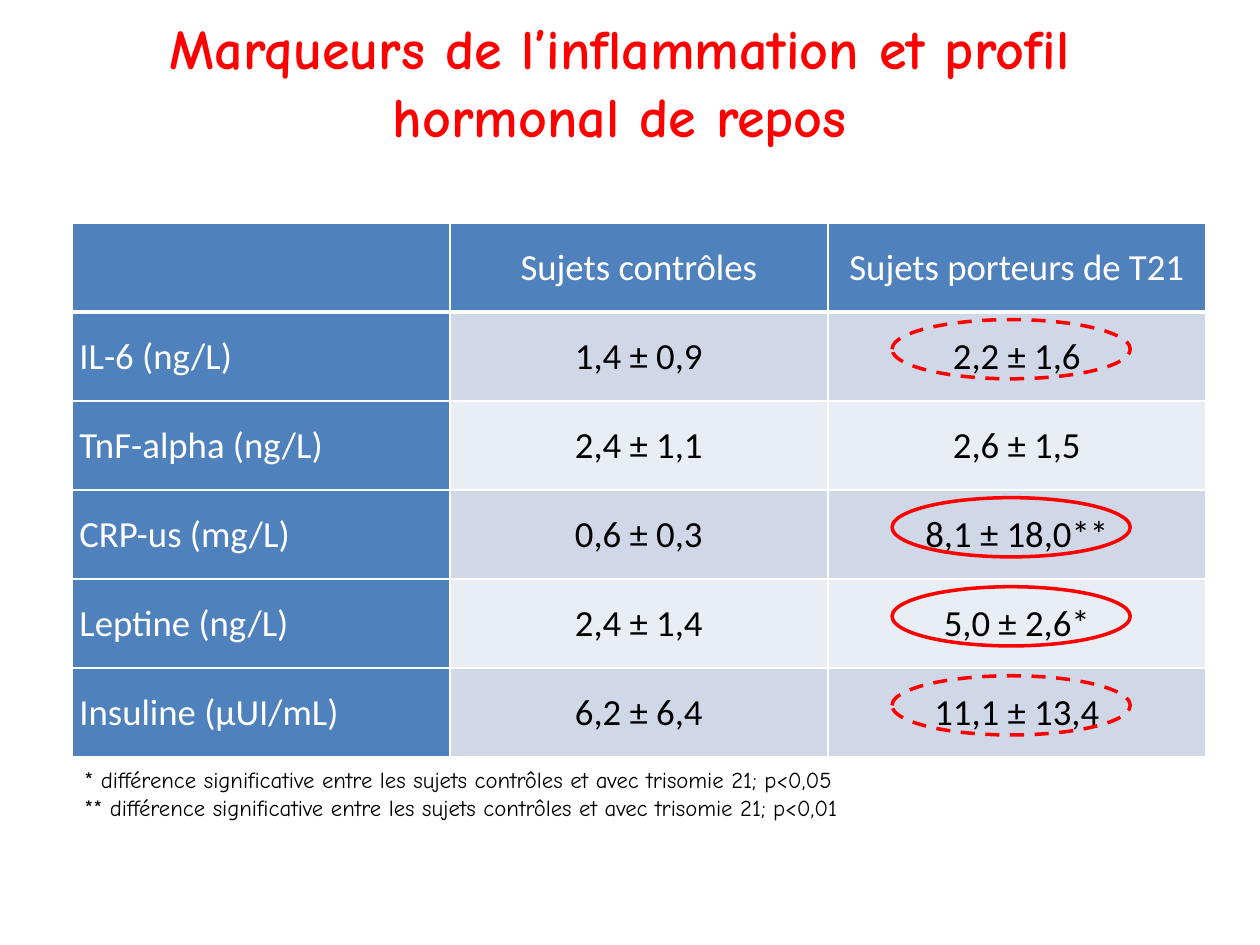
import pptx
import pptx.util
import pptx.dml.color
import pptx.enum.dml
import pptx.enum.shapes
import pptx.enum.text
import pptx.oxml
import pptx.oxml.ns

Inches = pptx.util.Inches
Pt = pptx.util.Pt
ALIGN = pptx.enum.text.PP_ALIGN

COLORS = {
    "accent": "FF0000",
    "header": "4F81BD",
    "odd_row": "D0D8E8",
    "even_row": "E9EDF4",
    "light": "FFFFFF",
    "dark": "000000",
}
ROWS = [
    ["", "Sujets contrôles", "Sujets porteurs de T21"],
    ["IL-6 (ng/L)", "1,4 ± 0,9", "2,2 ± 1,6"],
    ["TnF-alpha (ng/L)", "2,4 ± 1,1", "2,6 ± 1,5"],
    ["CRP-us (mg/L)", "0,6 ± 0,3", "8,1 ± 18,0**"],
    ["Leptine (ng/L)", "2,4 ± 1,4", "5,0 ± 2,6*"],
    ["Insuline (µUI/mL)", "6,2 ± 6,4", "11,1 ± 13,4"],
]
DASHED_BY_ROW = {1: True, 3: False, 4: False, 5: True}
FOOTNOTES = [
    "* différence significative entre les sujets contrôles et avec trisomie 21; p<0,05",
    "** différence significative entre les sujets contrôles et avec trisomie 21; p<0,01",
]


def rgb(name):
    return pptx.dml.color.RGBColor.from_string(COLORS[name])


def write_text(frame, text, *, size, font="Calibri", color="dark", bold=False,
               align=ALIGN.LEFT, spacing=None, margins=(0.1, 0.05)):
    frame.word_wrap = True
    frame.margin_left = frame.margin_right = Inches(margins[0])
    frame.margin_top = frame.margin_bottom = Inches(margins[1])
    frame.text = text
    for paragraph in frame.paragraphs:
        paragraph.alignment = align
        paragraph.line_spacing = spacing
        for run in paragraph.runs:
            run.font.size = Pt(size)
            run.font.name = font
            run.font.bold = bold
            run.font.color.rgb = rgb(color)


def add_borders(cell, bottom_width):
    properties = cell._tc.get_or_add_tcPr()
    for side, width in (("L", 1), ("R", 1), ("T", 1), ("B", bottom_width)):
        properties.append(pptx.oxml.parse_xml(
            f'<a:ln{side} {pptx.oxml.ns.nsdecls("a")} w="{Pt(width)}"><a:solidFill>'
            f'<a:srgbClr val="{COLORS["light"]}"/></a:solidFill></a:ln{side}>'))


def add_title(slide, left, top, width, height):
    title = slide.shapes.title
    title.left, title.top, title.width, title.height = left, top, width, height
    write_text(title.text_frame, "Marqueurs de l’inflammation et profil hormonal de repos",
               size=32, font="Comic Neue", color="accent", bold=True, align=ALIGN.CENTER)
    title.text_frame.vertical_anchor = pptx.enum.text.MSO_ANCHOR.TOP
    title.text_frame.auto_size = pptx.enum.text.MSO_AUTO_SIZE.NONE


def add_results_table(slide, left, top, width, height):
    table = slide.shapes.add_table(len(ROWS), len(ROWS[0]), left, top, width, height).table
    for row_index, values in enumerate(ROWS):
        for column_index, value in enumerate(values):
            cell = table.cell(row_index, column_index)
            is_header = row_index == 0 or column_index == 0
            band = "odd_row" if row_index % 2 else "even_row"
            add_borders(cell, bottom_width=1 if row_index else 3)
            cell.fill.solid()
            cell.fill.fore_color.rgb = rgb("header" if is_header else band)
            cell.margin_left = cell.margin_right = Inches(0.06)
            cell.margin_top = cell.margin_bottom = 0
            write_text(cell.text_frame, value, size=21, spacing=1.5, margins=(0.06, 0),
                       color="light" if is_header else "dark",
                       align=ALIGN.CENTER if column_index else ALIGN.LEFT)


def add_highlights(slide, left, top, width, height):
    row_height = height / len(ROWS)
    column_width = width / len(ROWS[0])
    for row_index, dashed in DASHED_BY_ROW.items():
        ellipse = slide.shapes.add_shape(
            pptx.enum.shapes.MSO_SHAPE.OVAL,
            int(left + 2 * column_width + Inches(0.51)),
            int(top + row_index * row_height + Inches(0.06)),
            Inches(1.89), Inches(0.47))
        ellipse.shadow.inherit = False
        ellipse.fill.background()
        ellipse.line.color.rgb = rgb("accent")
        ellipse.line.width = Pt(2)
        if dashed:
            ellipse.line.dash_style = pptx.enum.dml.MSO_LINE.DASH


def add_footnotes(slide, left, top, width, height):
    box = slide.shapes.add_textbox(left, top, width, height)
    write_text(box.text_frame, "\n".join(FOOTNOTES), size=13, font="Comic Neue",
               margins=(0.08, 0.04))


def main():
    presentation = pptx.Presentation()
    presentation.slide_width = Inches(10)
    presentation.slide_height = Inches(7.5)
    slide = presentation.slides.add_slide(presentation.slide_layouts[5])
    table_box = (Inches(0.57), Inches(1.77), Inches(9), Inches(4.24))
    add_title(slide, Inches(0.59), Inches(0.06), Inches(8.66), Inches(1.2))
    add_results_table(slide, *table_box)
    add_highlights(slide, *table_box)
    add_footnotes(slide, Inches(0.59), Inches(6.04), Inches(7.71), Inches(0.52))
    presentation.save("out.pptx")


if __name__ == "__main__":
    main()
